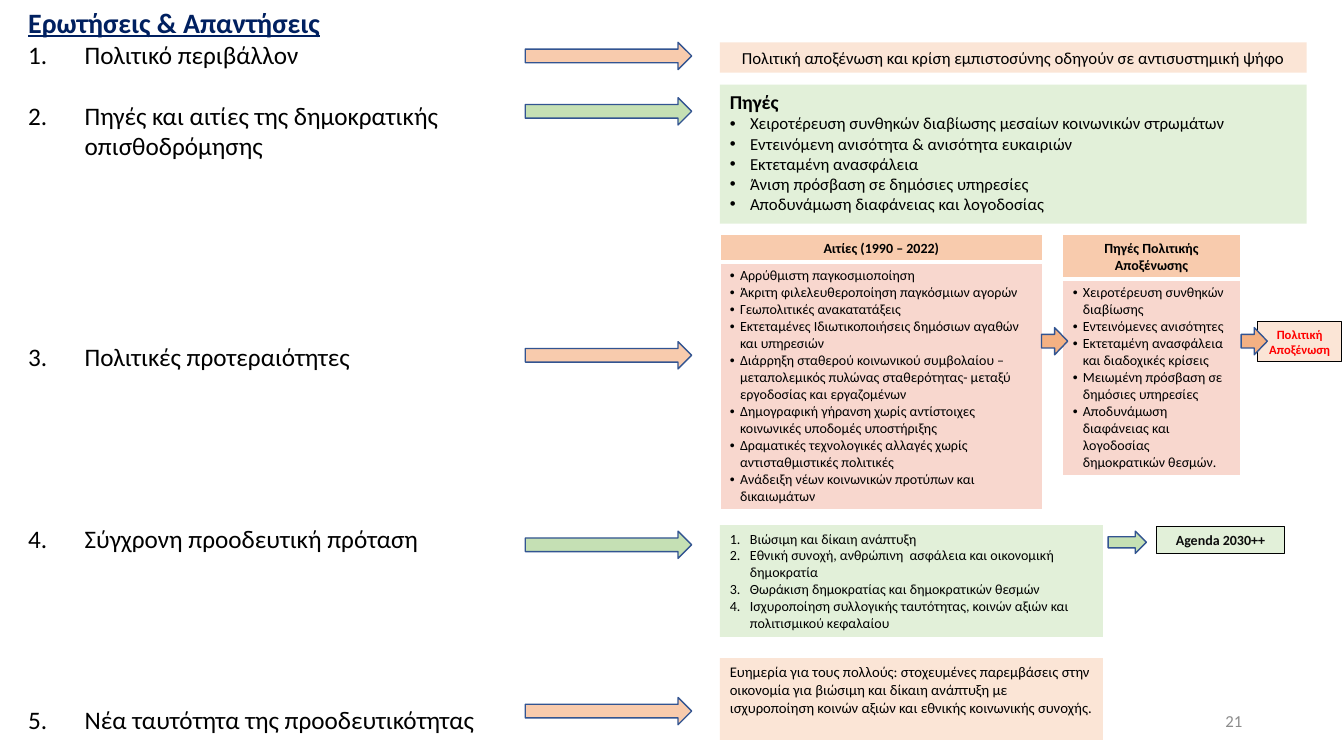
from dataclasses import dataclass

from lxml.etree import SubElement
from pptx import Presentation
from pptx.dml.color import RGBColor
from pptx.enum.shapes import MSO_SHAPE as Preset
from pptx.enum.text import MSO_ANCHOR as Anchor, MSO_AUTO_SIZE as AutoSize, PP_ALIGN as Align
from pptx.oxml.ns import qn
from pptx.util import Inches, Pt


@dataclass(frozen=True)
class Theme:
    font: str = "Calibri"
    navy: str = "002060"
    black: str = "000000"
    near_black: str = "0D0D0D"
    grey: str = "8C8C8C"
    red: str = "FF0000"
    white: str = "FFFFFF"
    peach: str = "FBE5D6"
    apricot: str = "F8CBAD"
    orange: str = "F4B183"
    rose: str = "F8D7CE"
    mint: str = "E2F0D9"
    green: str = "C5E0B4"
    outline: str = "325491"
    title: float = 20
    topic: float = 18
    heading: float = 14
    body: float = 12
    summary: float = 10.5
    detail: float = 10
    tag: float = 9


class QuestionSlide:
    """Places elements by columns and rows, ten of each to the inch."""

    def __init__(self, deck, theme):
        self.theme = theme
        self.slide = deck.slides.add_slide(deck.slide_layouts[1])
        self.column = deck.slide_width / 133.3
        self.row = deck.slide_height / 75

    def area(self, left, top, width, height):
        return (round(left * self.column), round(top * self.row),
                round(width * self.column), round(height * self.row))

    def add_lines(self, frame, lines, size, color=None, align=Align.LEFT,
                  bullet=None, indent=0, gaps=None, **style):
        """Add paragraphs; bullet is a character, or "1." for numbering."""
        font_format = {"name": self.theme.font, "size": Pt(size), **style}
        for index, line in enumerate(lines):
            paragraph = frame.paragraphs[0] if not frame.text else frame.add_paragraph()
            paragraph.alignment = align
            paragraph.space_before = Pt(gaps[index] if gaps else 0)
            run = paragraph.add_run()
            run.text = line
            for name, value in font_format.items():
                setattr(run.font, name, value)
            run.font.color.rgb = RGBColor.from_string(color or self.theme.black)
            properties = paragraph._p.get_or_add_pPr()
            properties.set("marL", str(Inches(indent)))
            properties.set("indent", str(-Inches(indent)))
            if bullet == "1.":
                SubElement(properties, qn("a:buAutoNum"), type="arabicPeriod")
            elif bullet:
                SubElement(properties, qn("a:buFont"), typeface="Arial")
                SubElement(properties, qn("a:buChar"), char=bullet)
            else:
                SubElement(properties, qn("a:buNone"))

    def prepare(self, frame, anchor=Anchor.TOP):
        frame_format = {"word_wrap": True, "auto_size": AutoSize.NONE, "vertical_anchor": anchor}
        for name, value in frame_format.items():
            setattr(frame, name, value)
        return frame

    def placeholder(self, index, area, lines, size, **style):
        holder = self.slide.placeholders[index]
        for name, value in zip(("left", "top", "width", "height"), self.area(*area)):
            setattr(holder, name, value)
        self.add_lines(self.prepare(holder.text_frame), lines, size, **style)

    def label(self, area, text, size, **style):
        box = self.slide.shapes.add_textbox(*self.area(*area))
        self.add_lines(self.prepare(box.text_frame, Anchor.MIDDLE), [text], size, **style)

    def shape(self, preset, area, fill, line=None, weight=0.75):
        shape = self.slide.shapes.add_shape(preset, *self.area(*area))
        shape.shadow.inherit = False
        shape.fill.solid()
        shape.fill.fore_color.rgb = RGBColor.from_string(fill)
        if line:
            shape.line.color.rgb = RGBColor.from_string(line)
            shape.line.width = Pt(weight)
        else:
            shape.line.fill.background()
        return shape

    def panel(self, area, fill, lines, size, line=None, **style):
        frame = self.prepare(self.shape(Preset.RECTANGLE, area, fill, line).text_frame)
        self.add_lines(frame, lines, size, **style)
        return frame

    def arrow(self, area, fill):
        self.shape(Preset.RIGHT_ARROW, area, fill, self.theme.outline, 1)

    def table(self, area, header_rows, header, points):
        """A heading cell above a cell of bullet points."""
        theme = self.theme
        table = self.slide.shapes.add_table(2, 1, *self.area(*area)).table
        table.first_row = table.horz_banding = False
        heights = header_rows, area[3] - header_rows
        contents = (
            (theme.apricot, 1, 3, [header], {"bold": True, "align": Align.CENTER}),
            (theme.rose, 3, 1, points, {"bullet": "•", "indent": 0.1}),
        )
        for index, (fill, top, bottom, lines, style) in enumerate(contents):
            table.rows[index].height = round(heights[index] * self.row)
            cell = table.cell(index, 0)
            self.border(cell, {"lnL": 1, "lnR": 1, "lnT": top, "lnB": bottom})
            cell.fill.solid()
            cell.fill.fore_color.rgb = RGBColor.from_string(fill)
            self.add_lines(cell.text_frame, lines, theme.detail, **style)

    def border(self, cell, weights):
        properties = cell._tc.get_or_add_tcPr()
        for side, weight in weights.items():
            edge = SubElement(properties, qn(f"a:{side}"), w=str(Pt(weight)))
            SubElement(SubElement(edge, qn("a:solidFill")), qn("a:srgbClr"), val=self.theme.white)


def main():
    deck = Presentation()
    deck.slide_width, deck.slide_height = Inches(13.33), Inches(7.5)
    theme = Theme()
    page = QuestionSlide(deck, theme)
    answers, arrows = 71.4, 52.1

    page.placeholder(0, (1.8, 0, 55.4, 3.9), ["Ερωτήσεις & Απαντήσεις"], theme.title,
                     color=theme.navy, bold=True, underline=True)
    empty_lines = 0, 1, 6, 5, 5
    page.placeholder(1, (1.8, 3.4, 55.4, 70.6), [
        "Πολιτικό περιβάλλον",
        "Πηγές και αιτίες της δημοκρατικής οπισθοδρόμησης",
        "Πολιτικές προτεραιότητες",
        "Σύγχρονη προοδευτική πρόταση",
        "Νέα ταυτότητα της προοδευτικότητας",
    ], theme.topic, bullet="1.", indent=0.56, gaps=[21.6 * count for count in empty_lines])
    page.label((94.2, 69.5, 30, 4), "21", theme.body, color=theme.grey, align=Align.RIGHT)

    page.panel((answers, 4.2, 58.2, 3), theme.peach,
               ["Πολιτική αποξένωση και κρίση εμπιστοσύνης οδηγούν σε αντισυστημική ψήφο"],
               theme.body, align=Align.CENTER)
    sources = page.panel((answers, 8.4, 58.2, 13.8), theme.mint, ["Πηγές"],
                         theme.heading, bold=True)
    page.add_lines(sources, [
        "Χειροτέρευση συνθηκών διαβίωσης μεσαίων κοινωνικών στρωμάτων",
        "Εντεινόμενη ανισότητα & ανισότητα ευκαιριών",
        "Εκτεταμένη ανασφάλεια",
        "Άνιση πρόσβαση σε δημόσιες υπηρεσίες",
        "Αποδυνάμωση διαφάνειας και λογοδοσίας",
    ], theme.body, bullet="•", indent=0.2)

    page.table((answers, 23.3, 32, 27), 2.7, "Αιτίες (1990 – 2022)", [
        "Αρρύθμιστη παγκοσμιοποίηση",
        "Άκριτη φιλελευθεροποίηση παγκόσμιων αγορών",
        "Γεωπολιτικές ανακατατάξεις",
        "Εκτεταμένες Ιδιωτικοποιήσεις δημόσιων αγαθών και υπηρεσιών",
        "Διάρρηξη σταθερού κοινωνικού συμβολαίου – μεταπολεμικός πυλώνας σταθερότητας- "
        "μεταξύ εργοδοσίας και εργαζομένων",
        "Δημογραφική γήρανση χωρίς αντίστοιχες κοινωνικές υποδομές υποστήριξης",
        "Δραματικές τεχνολογικές αλλαγές χωρίς αντισταθμιστικές πολιτικές",
        "Ανάδειξη νέων κοινωνικών προτύπων και δικαιωμάτων",
    ])
    page.table((105.4, 23.3, 17.6, 23.7), 4.3, "Πηγές Πολιτικής Αποξένωσης", [
        "Χειροτέρευση συνθηκών διαβίωσης",
        "Εντεινόμενες ανισότητες",
        "Εκτεταμένη ανασφάλεια και διαδοχικές κρίσεις",
        "Μειωμένη πρόσβαση σε δημόσιες υπηρεσίες",
        "Αποδυνάμωση διαφάνειας και λογοδοσίας δημοκρατικών θεσμών.",
    ])
    page.panel((124.7, 31.9, 8.4, 4), theme.peach, ["Πολιτική", "Αποξένωση"], theme.tag,
               theme.black, color=theme.red, bold=True, align=Align.CENTER)

    page.panel((answers, 52.1, 38, 11.1), theme.mint, [
        "Βιώσιμη και δίκαιη ανάπτυξη",
        "Εθνική συνοχή, ανθρώπινη  ασφάλεια και οικονομική δημοκρατία",
        "Θωράκιση δημοκρατίας και δημοκρατικών θεσμών",
        "Ισχυροποίηση συλλογικής ταυτότητας, κοινών αξιών και πολιτισμικού κεφαλαίου",
    ], theme.detail, bullet="1.", indent=0.2)
    page.panel((114.7, 52.2, 12.7, 2.7), theme.mint, ["Agenda 2030++"], theme.detail,
               theme.black, color=theme.near_black, bold=True, align=Align.CENTER)
    page.panel((answers, 65.3, 38, 8.1), theme.peach, [
        "Ευημερία για τους πολλούς: στοχευμένες παρεμβάσεις στην οικονομία για βιώσιμη και "
        "δίκαιη ανάπτυξη με ισχυροποίηση κοινών αξιών και εθνικής κοινωνικής συνοχής.",
    ], theme.summary)

    topic_arrows = zip((4.2, 9.7, 33.9, 52.7, 69.2),
                       (theme.apricot, theme.green, theme.apricot, theme.green, theme.apricot))
    for top, fill in topic_arrows:
        page.arrow((arrows, top, 16.5, 2.7), fill)
    for left in (103.3, 123.1):
        page.arrow((left, 32.5, 2.6, 2.7), theme.orange)
    page.arrow((109.9, 52.7, 3.8, 2.2), theme.green)

    deck.save("out.pptx")


if __name__ == "__main__":
    main()
